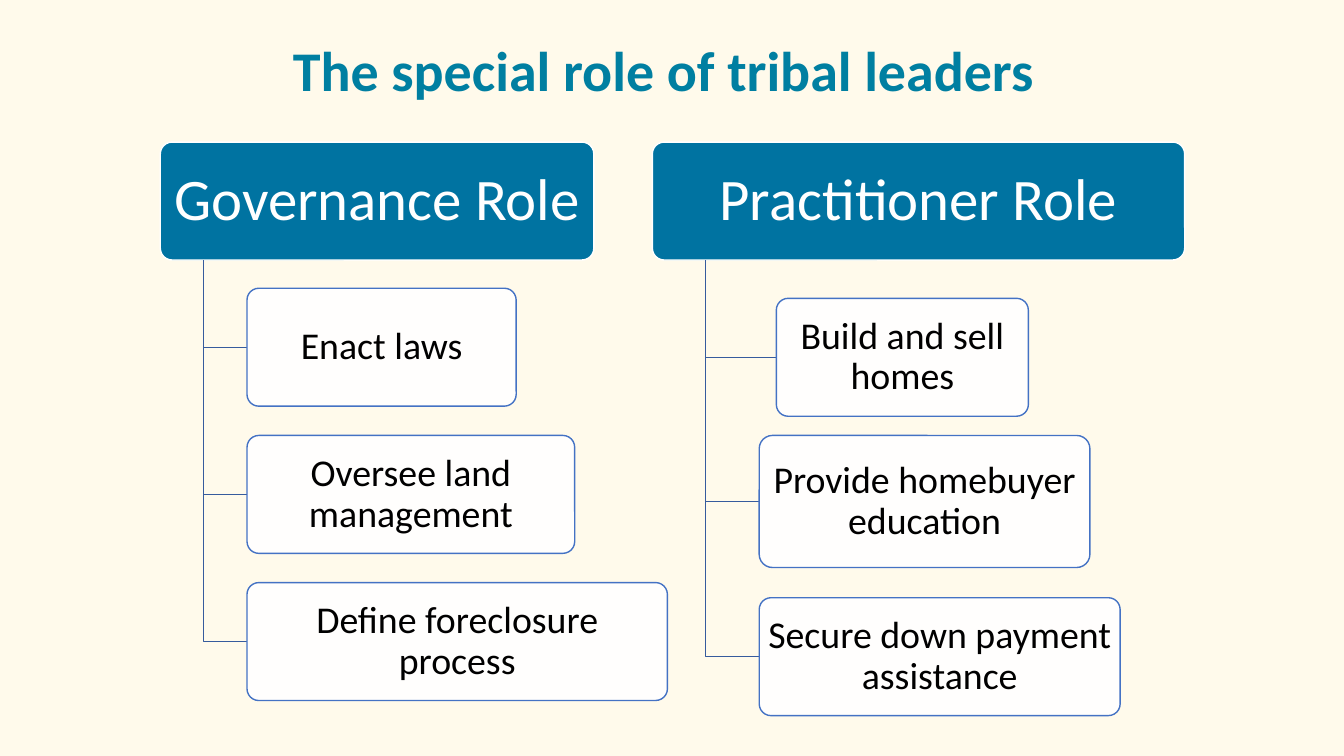
from pptx import Presentation
from pptx.dml.color import RGBColor as RGB
from pptx.enum.shapes import MSO_SHAPE as Kind
from pptx.enum.text import MSO_ANCHOR as Anchor, MSO_AUTO_SIZE as Fit, PP_ALIGN as Align
from pptx.util import Inches, Pt
from lxml.etree import SubElement
from pptx.oxml.ns import qn

# Content: head, its left and width, trunk x, then (text, left, top, width, height)
TITLE = "The special role of tribal leaders"
ROW = 1.17
ROLES = [
    ("Governance Role", 1.59, 4.3, 2.02, [
        ("Enact laws", 2.45, 2.86, 2.67, ROW),
        ("Oversee land management", 2.45, 4.32, 3.25, ROW),
        ("Define foreclosure process", 2.45, 5.78, 4.17, ROW)]),
    ("Practitioner Role", 6.47, 5.28, 7, [
        ("Build and sell homes", 7.7, 2.96, 2.5, ROW),
        ("Provide homebuyer education", 7.53, 4.32, 3.28, 1.31),
        ("Secure down payment assistance", 7.53, 5.93, 3.58, ROW)]),
]
TOP = 1.41

# Theme
THEME = {
    "page": "FFFAEB", "wire": "365B9D",
    "title": {"size": 40, "color": "007FA1", "bold": True},
    "head": {"size": 42, "color": "FFFFFF", "bold": False,
             "fill": "0073A1", "line": "FFFFFF", "inset": (0.08, 0.06)},
    "item": {"size": 27, "color": "000000", "bold": False,
             "fill": "FFFFFF", "line": "4472C4", "inset": (0.05, 0.04), "alpha": 90},
}

deck = Presentation()
deck.slide_width, deck.slide_height = Inches(13.33), Inches(7.5)
slide = deck.slides.add_slide(deck.slide_layouts[6])
slide.background.fill.solid()
slide.background.fill.fore_color.rgb = RGB.from_string(THEME["page"])
shapes = slide.shapes


def write(frame, text, look):
    frame.word_wrap = True
    para = frame.paragraphs[0]
    para.alignment, para.line_spacing = Align.CENTER, 0.9
    run = para.add_run()
    run.text = text
    form = {"name": "Calibri", "size": Pt(look["size"]), "bold": look["bold"]}
    for key, val in form.items():
        setattr(run.font, key, val)
    run.font.color.rgb = RGB.from_string(look["color"])


def stroke(shape, color):
    shape.shadow.inherit = False
    shape.line.color.rgb = RGB.from_string(color)
    shape.line.width = Pt(1)


def card(text, left, top, wide, high, look):
    box = shapes.add_shape(Kind.ROUNDED_RECTANGLE, *map(Inches, (left, top, wide, high)))
    box.adjustments[0] = 0.1
    box.fill.solid()
    box.fill.fore_color.rgb = RGB.from_string(look["fill"])
    if "alpha" in look:
        tint = box.fill._xPr.find(".//" + qn("a:srgbClr"))
        SubElement(tint, qn("a:alpha"), val=str(look["alpha"] * 1000))
    stroke(box, look["line"])
    side, edge = map(Inches, look["inset"])
    form = {"margin_left": side, "margin_right": side, "margin_top": edge,
            "margin_bottom": edge, "vertical_anchor": Anchor.MIDDLE}
    for key, val in form.items():
        setattr(box.text_frame, key, val)
    write(box.text_frame, text, look)


def elbow(x, y, end, mid):
    pen = shapes.build_freeform(Inches(x), Inches(y))
    pen.add_line_segments([(Inches(x), Inches(mid)), (Inches(end), Inches(mid))], close=False)
    wire = pen.convert_to_shape()
    wire.fill.background()
    stroke(wire, THEME["wire"])


# Role trees: each item hangs from the trunk by an elbow to its middle
for head, left, wide, trunk, items in ROLES:
    card(head, left, TOP, wide, ROW, THEME["head"])
    for text, x, y, w, h in items:
        elbow(trunk, TOP + ROW, x, y + h / 2)
        card(text, x, y, w, h, THEME["item"])

# Title
title = shapes.add_textbox(*map(Inches, (0.83, 0.38, 11.5, 0.71)))
write(title.text_frame, TITLE, THEME["title"])
title.text_frame.auto_size = Fit.SHAPE_TO_FIT_TEXT

deck.save("out.pptx")
